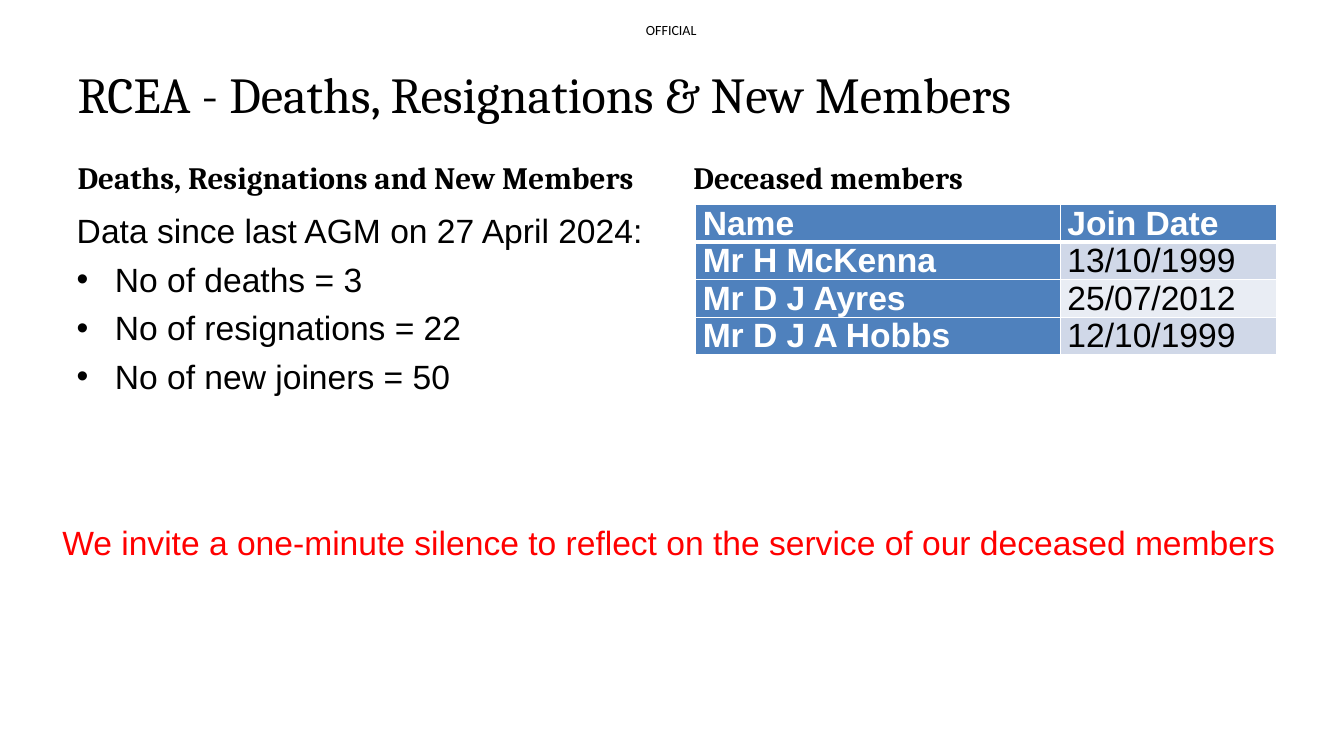
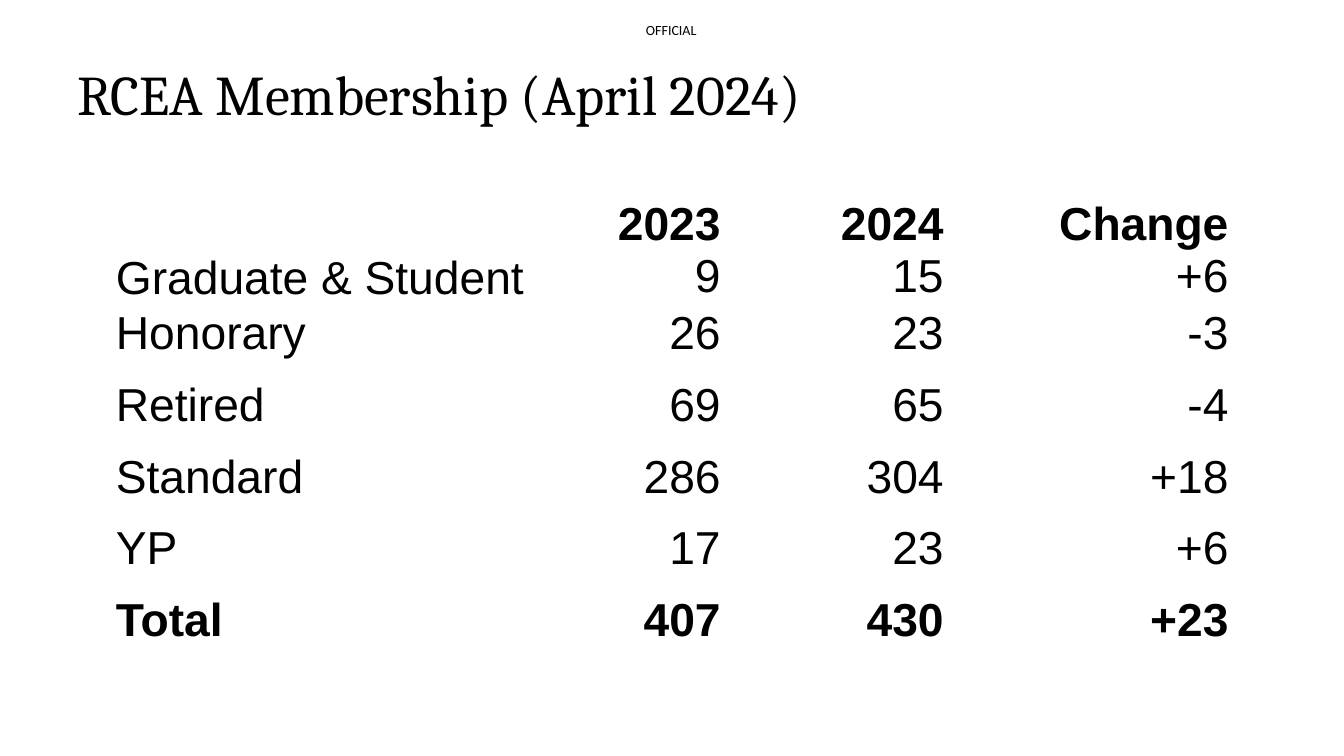
from lxml import etree
from pptx import Presentation
from pptx import util as u
from pptx.dml.color import RGBColor
from pptx.enum import text
from pptx.oxml import ns

Cm, Pt = u.Cm, u.Pt
LEFT, RIGHT = text.PP_ALIGN.LEFT, text.PP_ALIGN.RIGHT
TOP, MIDDLE, BOTTOM = text.MSO_ANCHOR.TOP, text.MSO_ANCHOR.MIDDLE, text.MSO_ANCHOR.BOTTOM
BLACK, WHITE, RED, BLUE = "000000", "FFFFFF", "FF0000", "4F81BD"
BANDS = ("D0D8E8", "E9EDF4")

TITLE = dict(name="Cambria", size=Pt(40), bold=False)
HEADING = dict(name="Cambria", size=Pt(22.2), bold=True)
BODY = dict(name="Arial", size=Pt(24), bold=False)
FIGURE = dict(name="Arial", size=Pt(33), bold=False)
MARKING = dict(name="Calibri", size=Pt(10), bold=False)


def rgb(value):
    """Turn a hex string into a colour."""
    return RGBColor.from_string(value)


class Deck:
    """Hold the presentation, its style and the current slide."""

    def __init__(self):
        """Start an empty widescreen presentation."""
        self.prs = Presentation()
        self.prs.slide_width, self.prs.slide_height = Cm(33.87), Cm(19.05)
        self.s = None

    def slide(self, layout, title, **fmt):
        """Add a slide and write its title."""
        self.s = self.prs.slides.add_slide(self.prs.slide_layouts[layout])
        self.placeholder(0, (1.7, 0.76, 25.91, 3.18), [title], {**TITLE, **fmt}, MIDDLE)

    def marking(self, label):
        """Put the protective marking on the slide master."""
        sp = self.textbox((16.28, 0.53, 1.35, 0.43), label, MARKING)
        tf = sp.text_frame
        tf.word_wrap = False
        self.insets(tf, 0, 0)
        self.prs.slide_master.shapes.element.append(sp.element)

    def insets(self, box, side, top):
        """Set the inner margins of a text frame or cell."""
        margins = dict(margin_left=side, margin_right=side, margin_top=top, margin_bottom=0)
        for key, value in margins.items():
            setattr(box, key, Cm(value))

    def paragraph(self, p, line, fmt, color=BLACK, align=LEFT, before=0):
        """Write one paragraph in one format."""
        p.alignment, p.space_before = align, Pt(before)
        r = p.add_run()
        r.text = line
        for key, value in fmt.items():
            setattr(r.font, key, value)
        r.font.color.rgb = rgb(color)

    def bullet(self, p, char=None):
        """Give a paragraph a hanging bullet, or none."""
        indent = Cm(0.96) if char else 0
        pPr = p._p.get_or_add_pPr()
        pPr.set("marL", str(indent))
        pPr.set("indent", str(-indent))
        bu = etree.SubElement(pPr, ns.qn("a:buChar" if char else "a:buNone"))
        if char:
            bu.set("char", char)

    def placeholder(self, idx, at, lines, fmt, anchor=TOP):
        """Move a placeholder and fill it, bulleting all lines but the first."""
        sp = next(ph for ph in self.s.placeholders if ph.placeholder_format.idx == idx)
        sp.left, sp.top, sp.width, sp.height = map(Cm, at)
        tf = sp.text_frame
        tf.auto_size, tf.vertical_anchor = text.MSO_AUTO_SIZE.NONE, anchor
        for i, line in enumerate(lines):
            p = tf.add_paragraph() if i else tf.paragraphs[0]
            self.bullet(p, "•" if i else None)
            self.paragraph(p, line, fmt, before=6 if i else 0)

    def textbox(self, at, line, fmt, color=BLACK):
        """Add a wrapped one-paragraph text box."""
        sp = self.s.shapes.add_textbox(*map(Cm, at))
        sp.text_frame.word_wrap = True
        self.paragraph(sp.text_frame.paragraphs[0], line, fmt, color)
        return sp

    def grid(self, left, top, cols, rows):
        """Add an unstyled table with the given column widths and row heights."""
        size = (left, top, sum(cols), sum(rows))
        tbl = self.s.shapes.add_table(len(rows), len(cols), *map(Cm, size)).table
        tbl.first_row = tbl.horz_banding = False
        for col, width in zip(tbl.columns, cols):
            col.width = Cm(width)
        for row, height in zip(tbl.rows, rows):
            row.height = Cm(height)
        return tbl

    def borders(self, cell, **widths):
        """Draw white cell borders of the given point widths."""
        tcPr = cell._tc.get_or_add_tcPr()
        for side, width in widths.items():
            ln = etree.SubElement(tcPr, ns.qn("a:ln" + side), w=str(Pt(width)))
            fill = etree.SubElement(ln, ns.qn("a:solidFill"))
            etree.SubElement(fill, ns.qn("a:srgbClr"), val=WHITE)

    def member_table(self, left, top, cols, data):
        """Add a banded table with a blue header row and first column."""
        tbl = self.grid(left, top, cols, [0.94] * len(data))
        for i, row in enumerate(data):
            for j, value in enumerate(row):
                cell = tbl.cell(i, j)
                head = i == 0 or j == 0
                self.insets(cell, 0.18, 0)
                cell.vertical_anchor = BOTTOM
                self.borders(cell, L=1, R=1, T=3 if i == 1 else 1, B=1 if i else 3)
                cell.fill.solid()
                cell.fill.fore_color.rgb = rgb(BLUE if head else BANDS[(i - 1) % 2])
                self.paragraph(cell.text_frame.paragraphs[0], value,
                               {**BODY, "bold": head}, WHITE if head else BLACK)

    def figure_table(self, left, cols, columns):
        """Add a plain table whose first row also carries the year headings."""
        count = len(columns[0][1])
        tbl = self.grid(left, 4.93, cols, [2.74] + [1.81] * (count - 1))
        for j, (heading, values, align) in enumerate(columns):
            for i, value in enumerate(values):
                cell = tbl.cell(i, j)
                self.insets(cell, 0.18, 0.08)
                cell.fill.background()
                cell.vertical_anchor = TOP if heading or i else BOTTOM
                tf = cell.text_frame
                p = tf.paragraphs[0]
                if heading and i == 0:
                    self.paragraph(p, heading, {**FIGURE, "bold": True}, align=align)
                    p = tf.add_paragraph()
                self.paragraph(p, value, {**FIGURE, "bold": i == count - 1}, align=align)


def main():
    """Build and save the slides."""
    d = Deck()

    d.slide(4, "RCEA\u00a0- Deaths, Resignations & New Members".replace("\u00a0", " "), size=Pt(36))
    d.marking("OFFICIAL")
    headings = {1: (1.7, "Deaths, Resignations and New Members"), 3: (17.22, "Deceased members")}
    for idx, (left, heading) in headings.items():
        d.placeholder(idx, (left, 3.94, 14.96, 1.12), [heading], HEADING, BOTTOM)
    d.member_table(17.53, 5.16, (9.19, 5.44), [
        ("Name", "Join Date"),
        ("Mr H McKenna", "13/10/1999"),
        ("Mr D J Ayres", "25/07/2012"),
        ("Mr D J A Hobbs", "12/10/1999"),
    ])
    d.placeholder(2, (1.68, 5.16, 14.96, 6.65), [
        "Data since last AGM on 27 April 2024:",
        "No of deaths = 3",
        "No of resignations = 22",
        "No of new joiners = 50",
    ], BODY)
    d.textbox((1.32, 13.03, 31.24, 1.7),
              "We invite a one-minute silence to reflect on the service of our deceased members",
              BODY, RED)
    spare = next(ph for ph in d.s.placeholders if ph.placeholder_format.idx == 4)
    spare.element.getparent().remove(spare.element)

    d.slide(5, "RCEA Membership (April 2024)")
    grades = ("Graduate & Student", "Honorary", "Retired", "Standard", "YP", "Total")
    d.figure_table(2.74, (12.27, 3.33), [
        (None, grades, LEFT),
        ("2023", ("9", "26", "69", "286", "17", "407"), RIGHT),
    ])
    d.figure_table(20.35, (3.61,), [("2024", ("15", "23", "65", "304", "23", "430"), RIGHT)])
    d.figure_table(25.93, (5.21,), [("Change", ("+6", "-3", "-4", "+18", "+6", "+23"), RIGHT)])

    d.prs.save("out.pptx")


if __name__ == "__main__":
    main()
